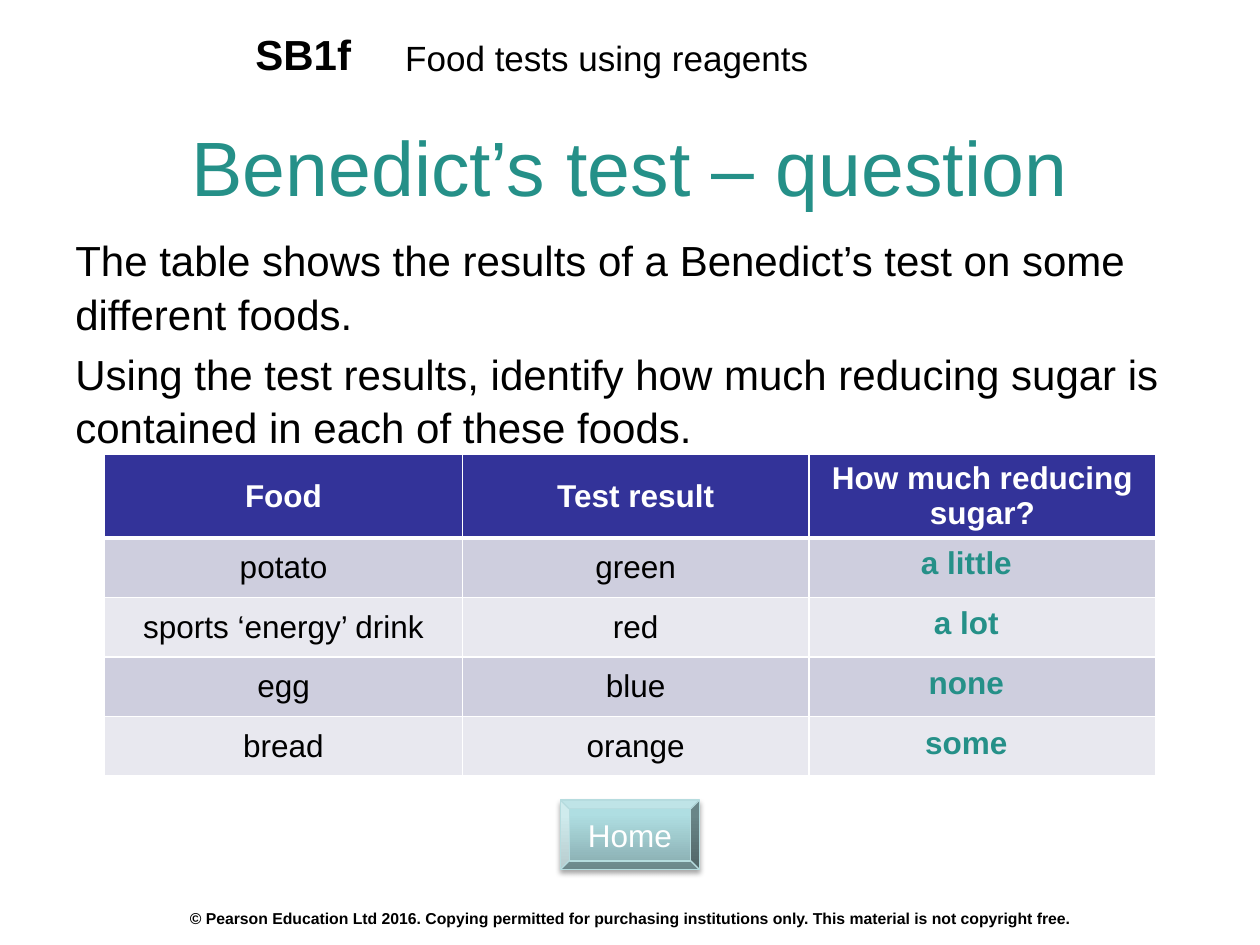
from dataclasses import dataclass
from lxml import etree
from pptx import Presentation, util as u
from pptx.dml.color import RGBColor
from pptx.enum import shapes, text
from pptx.oxml import parse_xml
from pptx.oxml.ns import nsdecls, qn

MID = text.MSO_ANCHOR.MIDDLE
TOP = text.MSO_ANCHOR.TOP
LEFT = text.PP_ALIGN.LEFT
CENTER = text.PP_ALIGN.CENTER
PLAIN = "{2D5ABB26-0587-4C30-8999-92F81FD0307C}"  # table style without lines


@dataclass(frozen=True)
class Theme:
    face: str = "Arial"
    ink: str = "000000"
    white: str = "FFFFFF"
    teal: str = "259088"
    head: str = "333399"
    bands: tuple = ("CECEDE", "E8E8EF")
    dark: str = "87ABAE"
    light: str = "AFDEE2"
    edge: str = "B6DCDF"
    title: int = 44
    body: int = 24
    topic: int = 20
    cell: int = 18
    note: int = 9


class Deck:
    def __init__(self, theme):
        self.theme = theme
        self.prs = Presentation()
        self.prs.slide_width, self.prs.slide_height = u.Cm(25.4), u.Cm(19.05)
        self.slide = self.prs.slides.add_slide(self.prs.slide_layouts[5])

    def fill_text(self, frame, lines, size, color, bold=False, align=CENTER):
        frame.word_wrap = True
        frame.text = "\n".join(lines)
        for para in frame.paragraphs:
            para.alignment = align
            font = para.font
            font.name, font.size, font.bold = self.theme.face, u.Pt(size), bold
            font.color.rgb = RGBColor.from_string(color)

    def title(self, box, line):
        shape = self.slide.shapes.title
        shape.left, shape.top, shape.width, shape.height = map(u.Cm, box)
        frame = shape.text_frame
        self.fill_text(frame, [line], self.theme.title, self.theme.teal)
        frame.auto_size = text.MSO_AUTO_SIZE.NONE
        frame.vertical_anchor = MID

    def label(self, box, lines, size, bold=False, align=LEFT, anchor=TOP):
        frame = self.slide.shapes.add_textbox(*map(u.Cm, box)).text_frame
        self.fill_text(frame, lines, size, self.theme.ink, bold, align)
        frame.vertical_anchor = anchor
        return frame

    def button(self, box, line):
        t = self.theme
        shape = self.slide.shapes.add_shape(
            shapes.MSO_SHAPE.BEVEL, *map(u.Cm, box))
        shape.fill.gradient()
        shape.fill.gradient_angle = 90
        stops = zip(shape.fill.gradient_stops, (t.dark, t.light), (0, 0.8))
        for stop, color, pos in stops:
            stop.color.rgb = RGBColor.from_string(color)
            stop.position = pos
        shape.line.color.rgb = RGBColor.from_string(t.edge)
        shape.line.width = u.Pt(0.75)
        # Soft shadow below
        shape.shadow.inherit = False
        effects = shape._element.spPr.find(qn("a:effectLst"))
        effects.append(parse_xml(
            f'<a:outerShdw {nsdecls("a")} blurRad="{u.Pt(3.1)}" '
            f'dist="{u.Pt(1.8)}" dir="5400000" rotWithShape="0">'
            '<a:srgbClr val="000000"><a:alpha val="35000"/></a:srgbClr>'
            '</a:outerShdw>'))
        frame = shape.text_frame
        self.fill_text(frame, [line], t.cell, t.white)
        frame.vertical_anchor = MID

    def grid(self, left, top, cols, rows):
        shape = self.slide.shapes.add_table(
            len(rows), len(cols), u.Cm(left), u.Cm(top),
            u.Cm(sum(cols)), u.Cm(sum(rows)))
        table = shape.table
        table.first_row = table.horz_banding = False
        table._tbl.tblPr.find(qn("a:tableStyleId")).text = PLAIN
        for col, wide in zip(table.columns, cols):
            col.width = u.Cm(wide)
        for row, high in zip(table.rows, rows):
            row.height = u.Cm(high)
        return table

    def cell(self, cell, line, color, fill=None, bold=False, anchor=MID):
        self.fill_text(cell.text_frame, [line], self.theme.cell, color, bold)
        cell.vertical_anchor = anchor
        if fill:
            cell.fill.solid()
            cell.fill.fore_color.rgb = RGBColor.from_string(fill)
        else:
            cell.fill.background()

    def border(self, cell, **widths):
        props = cell._tc.get_or_add_tcPr()
        for spot, side in enumerate("LRTB"):
            line = etree.Element(qn(f"a:ln{side}"),
                                 w=str(u.Pt(widths.get(side, 1))))
            fill = etree.SubElement(line, qn("a:solidFill"))
            etree.SubElement(fill, qn("a:srgbClr"), val=self.theme.white)
            props.insert(spot, line)

    def results(self, left, top, cols, rows, data):
        t = self.theme
        table = self.grid(left, top, cols, rows)
        for r, line in enumerate(data):
            head = r == 0
            for c, word in enumerate(line):
                cell = table.cell(r, c)
                cell.margin_top = cell.margin_bottom = u.Cm(0.08)
                self.cell(cell, word, t.white if head else t.ink,
                          t.head if head else t.bands[(r - 1) % 2], head)
                self.border(cell, T=3 if r == 1 else 1, B=3 if head else 1)

    def answers(self, left, top, wide, rows, words):
        table = self.grid(left, top, [wide], rows)
        for r, word in enumerate(words):
            cell = table.cell(r, 0)
            self.cell(cell, word, self.theme.teal, bold=True, anchor=TOP)
            if not word:
                cell.margin_top = cell.margin_bottom = 0


def main():
    t = Theme()
    deck = Deck(t)

    # Unit header
    deck.label((4.9, 0.46, 2.8, 1), ["SB1f"], t.body, bold=True)
    deck.label((7.92, 0.61, 15.82, 1.02), ["Food tests using reagents"],
               t.topic)

    # Title and task
    deck.title((1.27, 2.44, 22.86, 1.8), "Benedict’s test – question")
    task = deck.label((1.27, 4.55, 22.81, 3.6), [
        "The table shows the results of a Benedict’s test on some "
        "different foods.",
        "Using the test results, identify how much reducing sugar is "
        "contained in each of these foods."], t.body)
    for para in task.paragraphs:
        para.line_spacing = 1.06
    task.paragraphs[1].space_before = u.Pt(4)

    # Results, with the answers laid over the last column
    deck.results(2.11, 9.16, [7.21, 6.99, 6.99], [1.67] + [1.2] * 4, [
        ("Food", "Test result", "How much reducing sugar?"),
        ("potato", "green", ""),
        ("sports ‘energy’ drink", "red", ""),
        ("egg", "blue", ""),
        ("bread", "orange", "")])
    deck.answers(14.78, 9.96, 9.4, [0.92] + [1.21] * 4,
                 ["", "a little", "a lot", "none", "some"])

    # Button and footer
    deck.button((11.3, 16.13, 2.8, 1.4), "Home")
    deck.label((0, 17.96, 25.4, 1.09), [
        "© Pearson Education Ltd 2016. Copying permitted for purchasing "
        "institutions only. This material is not copyright free."],
        t.note, bold=True, align=CENTER, anchor=MID)

    deck.prs.save("out.pptx")


if __name__ == "__main__":
    main()
